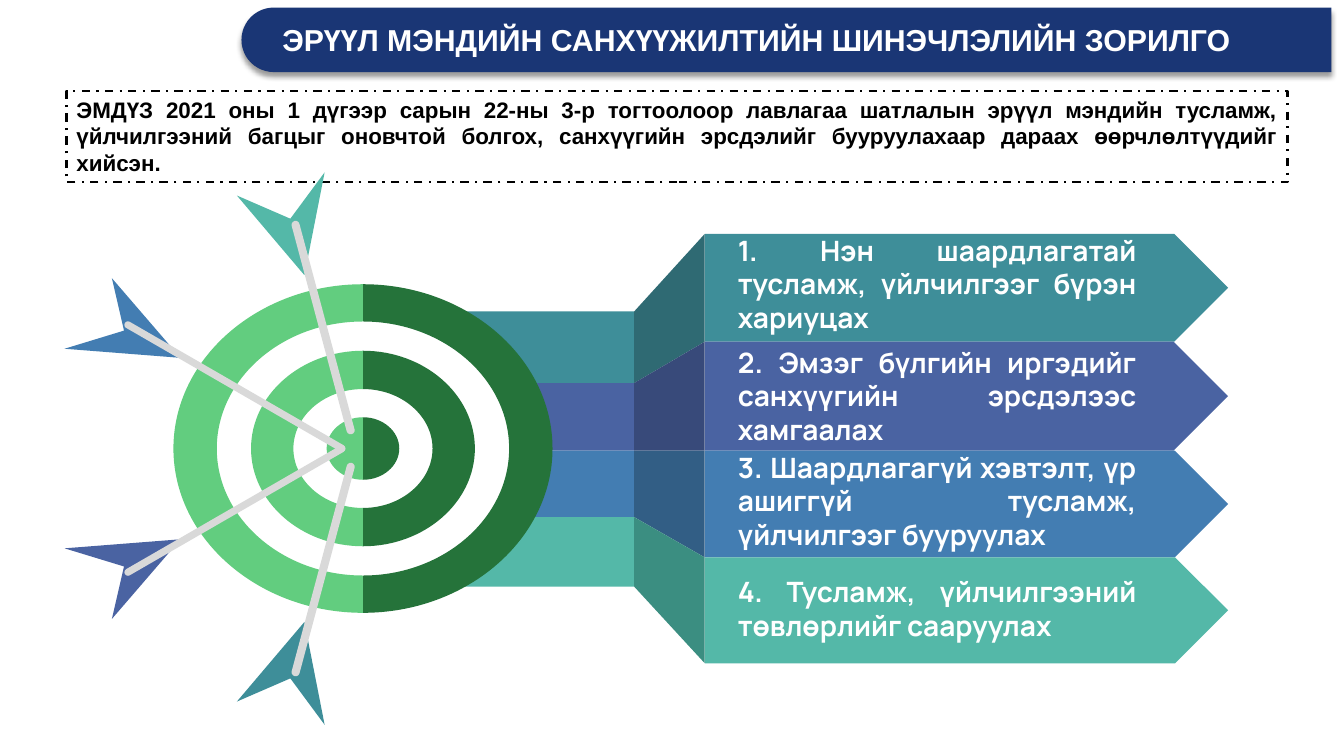
from dataclasses import dataclass
from itertools import pairwise

from lxml.etree import SubElement
from pptx import Presentation
from pptx.dml.color import RGBColor
from pptx.enum.dml import MSO_LINE
from pptx.enum.shapes import MSO_SHAPE
from pptx.enum.text import MSO_ANCHOR, MSO_AUTO_SIZE, PP_ALIGN
from pptx.oxml.ns import qn
from pptx.shapes.autoshape import Shape
from pptx.slide import Slide
from pptx.text.text import TextFrame
from pptx.util import Inches, Pt

NAVY = RGBColor(0x1A, 0x36, 0x75)
WHITE = RGBColor(0xFF, 0xFF, 0xFF)
BLACK = RGBColor(0x00, 0x00, 0x00)
GREY = RGBColor(0xD9, 0xD9, 0xD9)
PETROL = RGBColor(0x3E, 0x8E, 0x99)
PETROL_DARK = RGBColor(0x2F, 0x6A, 0x73)
INDIGO = RGBColor(0x4A, 0x63, 0xA2)
INDIGO_DARK = RGBColor(0x38, 0x4A, 0x7A)
BLUE = RGBColor(0x43, 0x7D, 0xB2)
BLUE_DARK = RGBColor(0x32, 0x5E, 0x85)
TEAL = RGBColor(0x54, 0xB8, 0xA8)
TEAL_DARK = RGBColor(0x3B, 0x8E, 0x81)
GREEN = RGBColor(0x62, 0xCD, 0x7F)
GREEN_DARK = RGBColor(0x25, 0x73, 0x3A)

Point = tuple[float, float]


@dataclass(frozen=True)
class Band:
    text: str
    color: RGBColor
    fold_color: RGBColor
    text_top: float
    text_height: float = 0.77


@dataclass(frozen=True)
class Dart:
    feather: list[Point]
    shaft: tuple[float, float, float, float]
    angle: float
    color: RGBColor
    mirror_color: RGBColor


BANDS = [
    Band("1. Нэн шаардлагатай тусламж, үйлчилгээг бүрэн хариуцах", PETROL, PETROL_DARK, 2.43),
    Band("2. Эмзэг бүлгийн иргэдийг санхүүгийн эрсдэлээс хамгаалах", INDIGO, INDIGO_DARK, 3.54),
    Band("3. Шаардлагагүй хэвтэлт, үр ашиггүй тусламж, үйлчилгээг бууруулах",
         BLUE, BLUE_DARK, 4.41, 1.11),
    Band("4. Тусламж, үйлчилгээний төвлөрлийг сааруулах", TEAL, TEAL_DARK, 5.65),
]
PLATE_EDGES = [2.32, 3.39, 4.47, 5.53, 6.58]
TAIL_EDGES = [3.09, 3.80, 4.47, 5.13, 5.82]
TAIL_RIGHT, PLATE_LEFT, PLATE_WIDTH = 6.29, 6.99, 5.19

CENTER_X, CENTER_Y = 3.6, 4.45
# Horizontal and vertical radii of each ring, outer then inner; the bullseye has no inner
RINGS = [[(1.88, 1.63), (1.45, 1.26)], [(1.11, 0.97), (0.69, 0.59)], [(0.36, 0.31)]]
KAPPA = 0.55  # Bézier handle length of a quarter ellipse

# Upper darts; the lower ones mirror them about the target's axis
DARTS = [
    Dart([(2.35, 1.94), (2.88, 2.17), (3.22, 1.71), (3.02, 2.73)],
         (2.11, 3.21, 2.19, 0.08), 255, TEAL, PETROL),
    Dart([(0.64, 3.46), (1.23, 3.28), (1.11, 2.76), (1.79, 3.55)],
         (1.07, 3.8, 2.52, 0.07), 210, BLUE, INDIGO),
]


def paint(sp: Shape, color: RGBColor) -> Shape:
    sp.shadow.inherit = False
    sp.fill.solid()
    sp.fill.fore_color.rgb = color
    sp.line.fill.background()
    return sp


def add_block(s: Slide, kind: MSO_SHAPE, x: float, y: float, w: float, h: float,
              color: RGBColor) -> Shape:
    return paint(s.shapes.add_shape(kind, Inches(x), Inches(y), Inches(w), Inches(h)), color)


def add_outline(s: Slide, contours: list[list[Point]], color: RGBColor) -> Shape:
    scaled = [[(Inches(x), Inches(y)) for x, y in contour] for contour in contours]
    builder = s.shapes.build_freeform(*scaled[0][0])
    for i, (start, *rest) in enumerate(scaled):
        if i:
            builder.move_to(*start)
        builder.add_line_segments(rest, close=True)
    return paint(builder.convert_to_shape(), color)


def write(tf: TextFrame, text: str, font: str, size: float, color: RGBColor,
          align: PP_ALIGN, anchor: MSO_ANCHOR, fit: MSO_AUTO_SIZE) -> None:
    tf.word_wrap = True
    tf.auto_size = fit
    tf.vertical_anchor = anchor
    p = tf.paragraphs[0]
    p.text = text
    p.alignment = align
    p.font.name, p.font.size, p.font.bold = font, Pt(size), True
    p.font.color.rgb = color


def add_title(s: Slide) -> None:
    bar = add_block(s, MSO_SHAPE.ROUND_2_SAME_RECTANGLE, 7.48, -5.01, 0.64, 10.81, NAVY)
    bar.rotation = 270
    bar.adjustments[0], bar.adjustments[1] = 0.5, 0
    effects = bar._element.spPr.find(qn("a:effectLst"))
    shadow = SubElement(effects, qn("a:outerShdw"), blurRad=str(Pt(4)), dist=str(Pt(3)),
                        dir="5400000", algn="t", rotWithShape="0")
    shade = SubElement(shadow, qn("a:srgbClr"), val=str(BLACK))
    SubElement(shade, qn("a:alpha"), val="40000")

    title = s.shapes.title
    bar._element.addnext(title._element)
    title.left, title.top = Inches(2.7), Inches(0.09)
    title.width, title.height = Inches(10.36), Inches(0.64)
    write(title.text_frame, "ЭРҮҮЛ МЭНДИЙН САНХҮҮЖИЛТИЙН ШИНЭЧЛЭЛИЙН ЗОРИЛГО", "Arial", 21.6,
          WHITE, PP_ALIGN.LEFT, MSO_ANCHOR.MIDDLE, MSO_AUTO_SIZE.NONE)
    title.text_frame.paragraphs[0].line_spacing = 0.9


def add_intro(s: Slide) -> None:
    box = add_block(s, MSO_SHAPE.RECTANGLE, 0.66, 0.9, 12.11, 0.91, WHITE)
    box.fill.background()
    box.line.color.rgb = BLACK
    box.line.width = Pt(1.5)
    box.line.dash_style = MSO_LINE.DASH_DOT
    write(box.text_frame,
          "ЭМДҮЗ 2021 оны 1 дүгээр сарын 22-ны 3-р тогтоолоор лавлагаа шатлалын эрүүл мэндийн "
          "тусламж, үйлчилгээний багцыг оновчтой болгох, санхүүгийн эрсдэлийг бууруулахаар "
          "дараах өөрчлөлтүүдийг хийсэн.", "Arial", 16, BLACK,
          PP_ALIGN.JUSTIFY, MSO_ANCHOR.TOP, MSO_AUTO_SIZE.SHAPE_TO_FIT_TEXT)


def add_bands(s: Slide) -> None:
    plates, tails = list(pairwise(PLATE_EDGES)), list(pairwise(TAIL_EDGES))
    for band, (top, bottom) in zip(BANDS, plates):
        add_block(s, MSO_SHAPE.PENTAGON, PLATE_LEFT, top, PLATE_WIDTH, bottom - top, band.color)
    for band, (top, bottom) in zip(BANDS, tails):
        add_block(s, MSO_SHAPE.RECTANGLE, CENTER_X, top, TAIL_RIGHT - CENTER_X, bottom - top,
                  band.color)
    for band, (top, bottom), (tail_top, tail_bottom) in zip(BANDS, plates, tails):
        add_outline(s, [[(PLATE_LEFT, top), (PLATE_LEFT, bottom), (TAIL_RIGHT, tail_bottom),
                         (TAIL_RIGHT, tail_top)]], band.fold_color)


def add_band_text(s: Slide, band: Band) -> None:
    box = s.shapes.add_textbox(Inches(7.22), Inches(band.text_top), Inches(4.15),
                               Inches(band.text_height))
    write(box.text_frame, band.text, "Manrope", 20, WHITE, PP_ALIGN.JUSTIFY,
          MSO_ANCHOR.MIDDLE, MSO_AUTO_SIZE.SHAPE_TO_FIT_TEXT)


def half_arc(radii: Point, side: int) -> list[Point]:
    """Nodes and handles of two quarter ellipses, from top to bottom."""
    units = [(0, -1), (KAPPA, -1), (1, -KAPPA), (1, 0), (1, KAPPA), (KAPPA, 1), (0, 1)]
    return [(CENTER_X + side * radii[0] * x, CENTER_Y + radii[1] * y) for x, y in units]


def curve_arcs(sp: Shape) -> None:
    """Turn each run of three segments of a half ring into one Bézier curve."""
    for start in sp._element.iter(qn("a:moveTo")):
        lines = []
        node = start.getnext()
        while node is not None and node.tag == qn("a:lnTo"):
            lines.append(node)
            node = node.getnext()
        for arc in (lines[:6], lines[7:]):
            for first, second, third in zip(arc[::3], arc[1::3], arc[2::3]):
                curve = first.makeelement(qn("a:cubicBezTo"))
                first.addprevious(curve)
                for line in (first, second, third):
                    curve.append(line[0])
                    line.getparent().remove(line)


def add_target(s: Slide) -> None:
    add_block(s, MSO_SHAPE.OVAL, 1.96, 3.02, 3.29, 2.85, WHITE)
    for side, color in ((1, GREEN_DARK), (-1, GREEN)):
        contours = [half_arc(outer, side) + [pt for radii in inner
                                             for pt in half_arc(radii, side)[::-1]]
                    for outer, *inner in RINGS]
        curve_arcs(add_outline(s, contours, color))


def add_dart(s: Slide, dart: Dart, mirrored: bool) -> None:
    feather, angle, color = dart.feather, dart.angle, dart.color
    x, y, w, h = dart.shaft
    if mirrored:
        feather = [(px, 2 * CENTER_Y - py) for px, py in feather]
        y, angle, color = 2 * CENTER_Y - y - h, 540 - angle, dart.mirror_color
    add_outline(s, [feather], color)
    shaft = add_block(s, MSO_SHAPE.ROUNDED_RECTANGLE, x, y, w, h, GREY)
    shaft.adjustments[0] = 0.5
    shaft.rotation = angle


def main() -> None:
    prs = Presentation()
    prs.slide_width, prs.slide_height = Inches(13.33), Inches(7.5)
    s = prs.slides.add_slide(prs.slide_layouts[5])

    # Heading and introduction
    add_title(s)
    add_intro(s)

    # Bands leading out of the target
    add_bands(s)

    # Target and darts
    add_target(s)
    for dart in DARTS:
        for mirrored in (False, True):
            add_dart(s, dart, mirrored)

    # Four goals
    for band in BANDS:
        add_band_text(s, band)

    prs.save("out.pptx")


if __name__ == "__main__":
    main()
